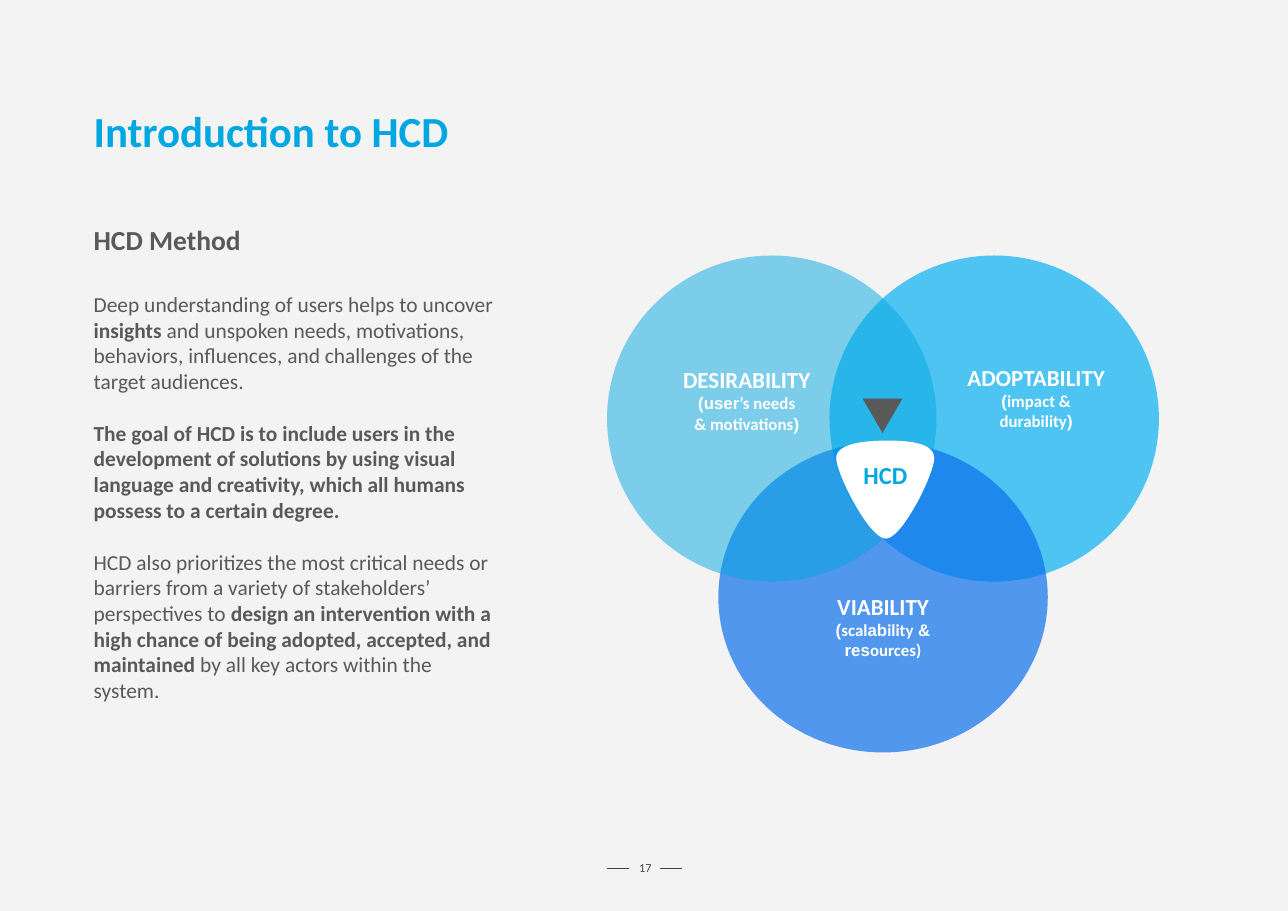
from dataclasses import dataclass

from lxml import etree
from pptx import Presentation
from pptx.dml.color import RGBColor
from pptx.enum.shapes import MSO_CONNECTOR, MSO_SHAPE
from pptx.enum.text import MSO_ANCHOR, MSO_AUTO_SIZE, PP_ALIGN
from pptx.oxml.ns import qn
from pptx.shapes.autoshape import Shape
from pptx.slide import Slide
from pptx.text.text import _Paragraph
from pptx.util import Emu, Inches, Pt

LEFT, CENTER = PP_ALIGN.LEFT, PP_ALIGN.CENTER
TOP, MIDDLE = MSO_ANCHOR.TOP, MSO_ANCHOR.MIDDLE
ELLIPSE, TRIANGLE = MSO_SHAPE.OVAL, MSO_SHAPE.ISOSCELES_TRIANGLE
STRAIGHT = MSO_CONNECTOR.STRAIGHT
NO_AUTOFIT = MSO_AUTO_SIZE.NONE

PAPER = RGBColor(0xF3, 0xF3, 0xF3)
WHITE = RGBColor(0xFF, 0xFF, 0xFF)
CYAN = RGBColor(0x00, 0xA7, 0xE1)
SKY = RGBColor(0x04, 0xB0, 0xF4)
BLUE = RGBColor(0x09, 0x6E, 0xEB)
GRAY = RGBColor(0x59, 0x59, 0x59)
DARK = RGBColor(0x43, 0x43, 0x43)

SANS, LABEL_SANS = "Calibri", "Arial"
WIDTH, HEIGHT = Inches(11.69), Inches(8.27)
MARGIN = 6.33
CIRCLE_WIDTH = 25.58
CURVE_STEPS = 24


@dataclass(frozen=True)
class Area:
    """A rectangle in percent of the slide's width and height."""
    left: float
    top: float
    width: float
    height: float

    def emu(self) -> tuple[Emu, Emu, Emu, Emu]:
        return (across(self.left), down(self.top),
                across(self.width), down(self.height))


@dataclass(frozen=True)
class Span:
    text: str
    bold: bool = False
    font: str = SANS


@dataclass(frozen=True)
class Lens:
    """One circle of the Venn diagram with its label."""
    circle: Area
    color: RGBColor
    opacity: int
    label: Area
    heading: str
    detail: list[Span]


LENSES = [
    Lens(Area(64.4, 28.05, CIRCLE_WIDTH, 35.8), SKY, 69,
         Area(71.43, 39.9, 18.05, 7.4), "ADOPTABILITY",
         [Span("(", True, LABEL_SANS), Span("impact &\ndurability", True),
          Span(")", True, LABEL_SANS)]),
    Lens(Area(55.77, 48.5, CIRCLE_WIDTH, 34.1), BLUE, 69,
         Area(57.66, 64.8, 21.8, 7.9), "VIABILITY",
         [Span("(", True, LABEL_SANS), Span("scal", True),
          Span("ab", True, LABEL_SANS), Span("ility", True),
          Span(" &\nres", True, LABEL_SANS), Span("ources)", True)]),
    Lens(Area(47.13, 28.05, CIRCLE_WIDTH, 35.8), CYAN, 49,
         Area(47.2, 39.9, 21.56, 7.9), "DESIRABILITY",
         [Span("(user", True, LABEL_SANS), Span("’s needs\n& motivations", True),
          Span(")", True, LABEL_SANS)]),
]

BODY = [
    [Span("Deep understanding of users helps to uncover "),
     Span("insights", True),
     Span(" and unspoken needs, motivations, behaviors, influences, "
          "and challenges of the target audiences.")],
    [Span("The goal of HCD is to include users in the development of solutions "
          "by using visual language and creativity, which all humans possess "
          "to a certain degree.", True)],
    [Span("HCD also prioritizes the most critical needs or barriers from a "
          "variety of stakeholders’ perspectives to "),
     Span("design an intervention with a high chance of being adopted, "
          "accepted, and maintained", True),
     Span(" by all key actors within the system.")],
]

# Bézier points of the centre: start, then two controls and an end per curve.
CORE_START = (64.93, 50.3)
CORE_CURVES = [
    ((64.93, 48.49), (67.66, 48.37), (68.95, 48.37)),
    ((70.23, 48.37), (72.54, 48.49), (72.54, 50.3)),
    ((72.54, 52), (70.06, 59.13), (68.78, 59.13)),
    ((67.49, 59.13), (64.93, 52), CORE_START),
]


def across(percent: float) -> Emu:
    return Emu(round(WIDTH * percent / 100))


def down(percent: float) -> Emu:
    return Emu(round(HEIGHT * percent / 100))


def write(paragraph: _Paragraph, spans: list[Span], size: float, color: RGBColor,
          **paragraph_format: object) -> None:
    """Fill a paragraph with runs; a newline in a span is a line break."""
    for name, value in paragraph_format.items():
        setattr(paragraph, name, value)
    for span in spans:
        for index, line in enumerate(span.text.split("\n")):
            if index:
                paragraph.add_line_break()
            run = paragraph.add_run()
            run.text = line
            run.font.color.rgb = color
            for name, value in {"name": span.font, "size": Pt(size),
                                "bold": span.bold}.items():
                setattr(run.font, name, value)


def set_frame(shape: Shape, anchor: MSO_ANCHOR, side: float, edge: float) -> None:
    """Set the wrapping, the anchor and the insets in inches."""
    frame_format = {
        "word_wrap": True, "auto_size": NO_AUTOFIT, "vertical_anchor": anchor,
        "margin_left": Inches(side), "margin_right": Inches(side),
        "margin_top": Inches(edge), "margin_bottom": Inches(edge),
    }
    for name, value in frame_format.items():
        setattr(shape.text_frame, name, value)


def add_text(slide: Slide, area: Area, anchor: MSO_ANCHOR = TOP,
             inset: float = 0.11) -> Shape:
    box = slide.shapes.add_textbox(*area.emu())
    set_frame(box, anchor, inset, inset)
    return box


def paint(shape: Shape, color: RGBColor, opacity: int = 100) -> None:
    shape.shadow.inherit = False
    shape.fill.solid()
    shape.fill.fore_color.rgb = color
    shape.line.fill.background()
    if opacity < 100:
        tint = shape.fill._xPr.find(qn("a:solidFill"))[0]
        etree.SubElement(tint, qn("a:alpha")).set("val", str(opacity * 1000))


def add_lens(slide: Slide, lens: Lens) -> None:
    paint(slide.shapes.add_shape(ELLIPSE, *lens.circle.emu()), lens.color, lens.opacity)
    frame = add_text(slide, lens.label, MIDDLE, 0.06).text_frame
    write(frame.paragraphs[0], [Span(lens.heading, True)], 15, WHITE, alignment=CENTER)
    write(frame.add_paragraph(), lens.detail, 11, WHITE, alignment=CENTER)


def add_core(slide: Slide) -> None:
    """Draw the rounded centre where the three circles meet."""
    outline, start = [], CORE_START
    for first, second, end in CORE_CURVES:
        for step in range(1, CURVE_STEPS + 1):
            t = step / CURVE_STEPS
            weights = ((1 - t) ** 3, 3 * t * (1 - t) ** 2, 3 * t * t * (1 - t), t ** 3)
            x, y = (sum(w * point[axis] for w, point in
                        zip(weights, (start, first, second, end))) for axis in (0, 1))
            outline.append((across(x), down(y)))
        start = end
    builder = slide.shapes.build_freeform(across(CORE_START[0]), down(CORE_START[1]))
    builder.add_line_segments(outline, close=True)
    paint(builder.convert_to_shape(), WHITE)


def add_page_number(slide: Slide) -> None:
    box = add_text(slide, Area(48.6, 93.8, 3, 3.1), MIDDLE, 0.1)
    write(box.text_frame.paragraphs[0], [Span("17")], 8, DARK,
          alignment=CENTER, line_spacing=0.8)
    for left in (47.15, 51.25):
        dash = slide.shapes.add_connector(
            STRAIGHT, across(left), down(95.35), across(left + 1.7), down(95.35))
        dash.line.color.rgb = DARK
        dash.line.width = Pt(0.75)
        etree.SubElement(dash._element.spPr, qn("a:effectLst"))


def add_copy(slide: Slide) -> None:
    title = slide.shapes.title
    title.left, title.top, title.width, title.height = Area(MARGIN, 10.04, 65.8, 9.3).emu()
    set_frame(title, MIDDLE, 0.11, 0.06)
    write(title.text_frame.paragraphs[0], [Span("Introduction to HCD", True)], 28, CYAN,
          alignment=LEFT, line_spacing=0.86)
    heading = add_text(slide, Area(MARGIN, 23.1, 67.6, 6.4))
    write(heading.text_frame.paragraphs[0], [Span("HCD Method", True)], 18, GRAY)
    frame = add_text(slide, Area(MARGIN, 30.6, 33.53, 48.4)).text_frame
    for index, spans in enumerate(BODY):
        paragraph = frame.add_paragraph() if index else frame.paragraphs[0]
        write(paragraph, spans, 14, GRAY, space_after=Pt(17 if index < len(BODY) - 1 else 0))


def main() -> None:
    deck = Presentation()
    deck.slide_width, deck.slide_height = WIDTH, HEIGHT
    slide = deck.slides.add_slide(deck.slide_layouts.get_by_name("Title Only"))
    slide.background.fill.solid()
    slide.background.fill.fore_color.rgb = PAPER
    add_page_number(slide)
    add_copy(slide)
    for lens in LENSES:
        add_lens(slide, lens)
    add_core(slide)
    core_label = add_text(slide, Area(66.1, 49.2, 9.25, 6.05))
    write(core_label.text_frame.paragraphs[0], [Span("HCD", True)], 16, CYAN)
    pointer = slide.shapes.add_shape(TRIANGLE, *Area(66.98, 43.77, 3.08, 3.75).emu())
    pointer.rotation = 180
    paint(pointer, GRAY)
    deck.save("out.pptx")


if __name__ == "__main__":
    main()
